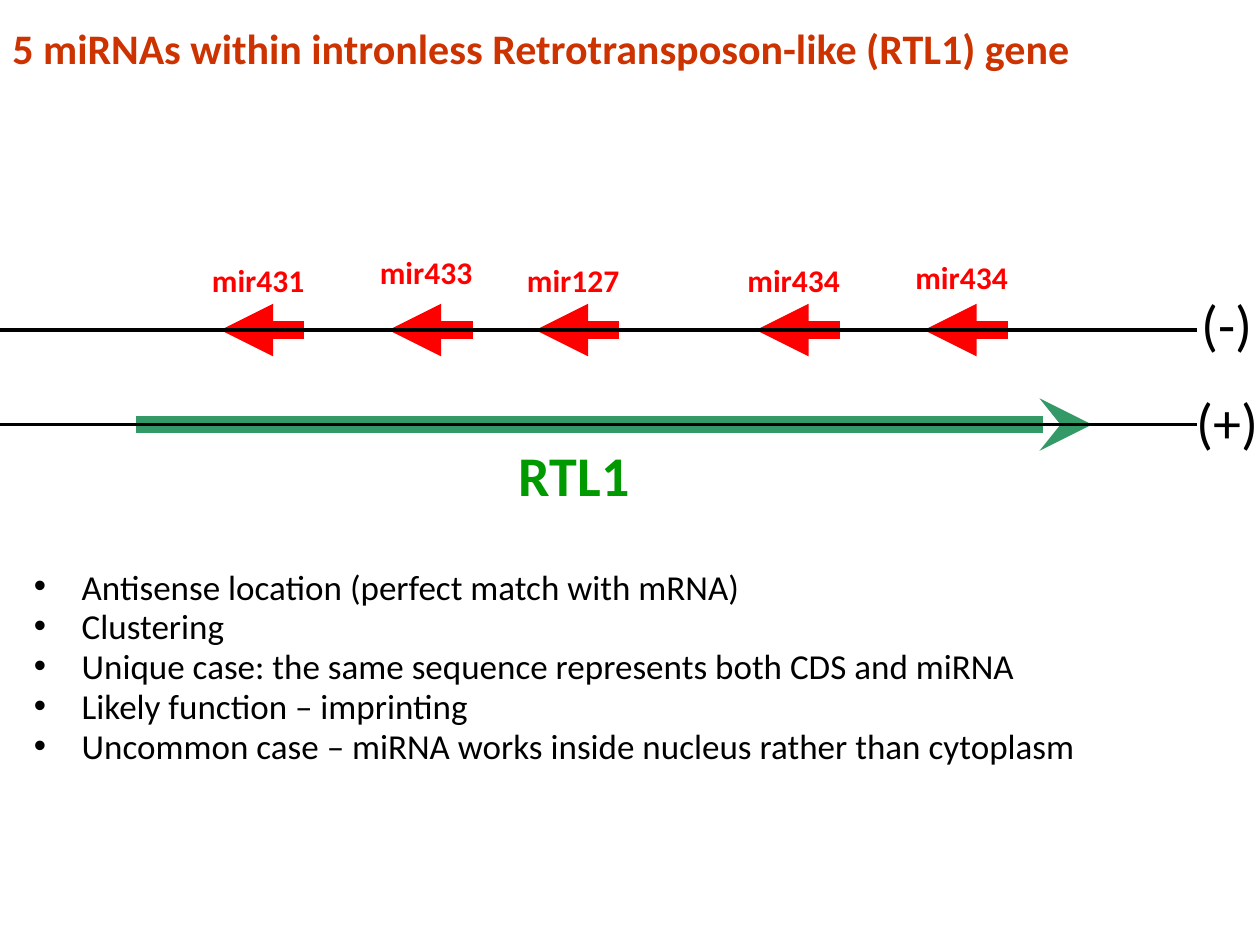
from pptx import Presentation
from pptx import util as u
from pptx.dml.color import RGBColor
from pptx.enum import shapes, text
from pptx.oxml.ns import qn
from lxml import etree

THEME = {
    "font": "Calibri",
    "title": (24, "CC3300", True),
    "body": (20, "000000", False),
    "strand": (32, "000000", False),
    "gene": (32, "009900", True),
    "mirna": (18, "FF0000", True),
    "gene_line": ("339966", 10),
    "mirna_line": ("FF0000", 10),
    "strand_line": ("000000", 2),
}

TITLE = "5 miRNAs within intronless Retrotransposon-like (RTL1) gene"
POINTS = [
    "Antisense location (perfect match with mRNA)",
    "Clustering",
    "Unique case: the same sequence represents both CDS and miRNA",
    "Likely function – imprinting",
    "Uncommon case – miRNA works inside nucleus rather than cytoplasm",
]
# name, grid column of the arrow tip, top of the label in inches
MIRNAS = [
    ("mir431", 21, 2.02),
    ("mir433", 37, 1.96),
    ("mir127", 51, 2.02),
    ("mir434", 72, 2.02),
    ("mir434", 88, 2.0),
]
# sign, line height, label box
STRANDS = [
    ("(+)", 3.37, (9.4, 3.03, 0.76, 0.63)),
    ("(-)", 2.62, (9.44, 2.25, 0.64, 0.63)),
]
PLUS_Y, MINUS_Y = (strand[1] for strand in STRANDS)

COLUMN = 1 / 12
ARROW_COLUMNS = 8
LABEL_SHIFT = 2
BULLET_INDENT = u.Inches(0.38)


def add_text(slide, box, lines, style, anchor=text.MSO_ANCHOR.TOP):
    size, color, bold = THEME[style]
    shape = slide.shapes.add_textbox(*(u.Inches(length) for length in box))
    frame = shape.text_frame
    frame.word_wrap = True
    frame.vertical_anchor = anchor
    frame.text = "\n".join(lines)
    for paragraph in frame.paragraphs:
        for run in paragraph.runs:
            run.font.name = THEME["font"]
            run.font.size = u.Pt(size)
            run.font.bold = bold
            run.font.color.rgb = RGBColor.from_string(color)
    return frame


def add_bullets(frame):
    for paragraph in frame.paragraphs:
        paragraph.line_spacing = 0.8
        paragraph.space_before = u.Pt(3.6)
        properties = paragraph._p.get_or_add_pPr()
        properties.set("marL", str(BULLET_INDENT))
        properties.set("indent", str(-BULLET_INDENT))
        etree.SubElement(properties, qn("a:buFont"), typeface="Arial")
        etree.SubElement(properties, qn("a:buChar"), char="•")


def add_line(slide, start, end, y, style, arrowhead=None):
    """Draw a horizontal line, with an optional arrowhead at its end."""
    color, width = THEME[style]
    connector = slide.shapes.add_connector(
        shapes.MSO_CONNECTOR.STRAIGHT,
        *(u.Inches(length) for length in (start, y, end, y)))
    connector.line.color.rgb = RGBColor.from_string(color)
    connector.line.width = u.Pt(width)
    if arrowhead:
        etree.SubElement(connector.line._get_or_add_ln(), qn("a:tailEnd"), type=arrowhead)
    etree.SubElement(connector._element.spPr, qn("a:effectLst"))


def main():
    presentation = Presentation()
    presentation.slide_width = u.Inches(10)
    presentation.slide_height = u.Inches(7.5)
    slide = presentation.slides.add_slide(presentation.slide_layouts[6])

    add_text(slide, (0, 0, 10, 0.75), [TITLE], "title", text.MSO_ANCHOR.MIDDLE)
    add_bullets(add_text(slide, (0.17, 4.5, 9.58, 2.2), POINTS, "body"))

    add_line(slide, 13 * COLUMN, 104 * COLUMN, PLUS_Y, "gene_line", "stealth")
    for name, tip, top in MIRNAS:
        add_line(slide, (tip + ARROW_COLUMNS) * COLUMN, tip * COLUMN,
                 MINUS_Y, "mirna_line", "triangle")
        add_text(slide, ((tip - LABEL_SHIFT) * COLUMN, top, 1.01, 0.4), [name], "mirna")

    for sign, y, box in STRANDS:
        add_line(slide, -COLUMN, 114 * COLUMN, y, "strand_line")
        add_text(slide, box, [sign], "strand")
    add_text(slide, (4.02, 3.45, 1.31, 0.63), ["RTL1"], "gene")

    presentation.save("out.pptx")


if __name__ == "__main__":
    main()
